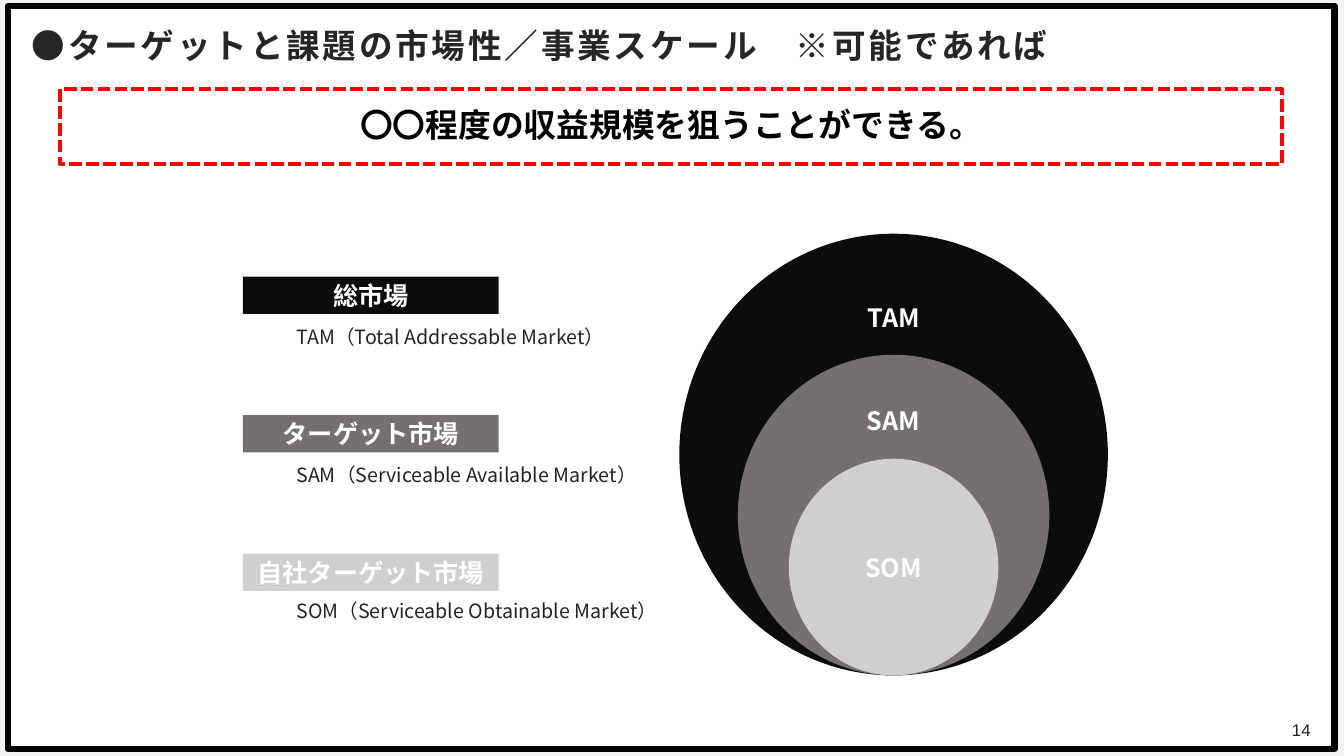
from pptx import Presentation
from pptx.dml.color import RGBColor
from pptx.enum.dml import MSO_LINE
from pptx.enum.shapes import MSO_SHAPE
from pptx.enum.text import MSO_ANCHOR, PP_ALIGN
from pptx.util import Cm, Pt
from lxml import etree

RECTANGLE, OVAL = MSO_SHAPE.RECTANGLE, MSO_SHAPE.OVAL
TOP, MIDDLE = MSO_ANCHOR.TOP, MSO_ANCHOR.MIDDLE
LEFT, CENTER, RIGHT = PP_ALIGN.LEFT, PP_ALIGN.CENTER, PP_ALIGN.RIGHT
DASH = MSO_LINE.SQUARE_DOT
DRAWING = "{http://schemas.openxmlformats.org/drawingml/2006/main}"
JAPANESE = "Noto Sans CJK JP"
COLORS = {
    "background": "F2F2F2", "white": "FFFFFF", "black": "000000", "red": "FF0000",
    "title": "262626", "caption": "232323", "number": "1F2021",
    "TAM": "0C0C0C", "SAM": "757070", "SOM": "D0CECE",
}


def color(name):
    return RGBColor.from_string(COLORS[name])


def write(text, box, kind=None, fill=None, line=None, line_width=3, dash=None,
          size=18, font=JAPANESE, ink="white", bold=False, align=CENTER,
          anchor=MIDDLE, margins=(0.18, 0.1), line_spacing=None, tracking=None):
    """Add a shape, or a text box when no kind is given, and format its text."""
    left, top, width, height = [Cm(value) for value in box]
    if kind is None:
        shape = slide.shapes.add_textbox(left, top, width, height)
    else:
        shape = slide.shapes.add_shape(kind, left, top, width, height)
        shape.shadow.inherit = False
        if fill:
            shape.fill.solid()
            shape.fill.fore_color.rgb = color(fill)
        else:
            shape.fill.background()
        if line:
            shape.line.color.rgb = color(line)
            shape.line.width = Pt(line_width)
            if dash:
                shape.line.dash_style = dash
        else:
            shape.line.fill.background()
    if not text:
        return
    frame = shape.text_frame
    frame.word_wrap = True
    frame.vertical_anchor = anchor
    frame.margin_left = frame.margin_right = Cm(margins[0])
    frame.margin_top = frame.margin_bottom = Cm(margins[1])
    paragraph = frame.paragraphs[0]
    paragraph.alignment = align
    if line_spacing:
        paragraph.line_spacing = line_spacing
    run = paragraph.add_run()
    run.text = text
    run.font.size = Pt(size)
    run.font.bold = bold
    run.font.color.rgb = color(ink)
    run.font.name = font
    # East Asian typeface and letter spacing
    properties = run.font._element
    etree.SubElement(properties, DRAWING + "ea").set("typeface", font)
    if tracking:
        properties.set("spc", str(tracking * 100))


presentation = Presentation()
presentation.slide_width = Cm(33.87)
presentation.slide_height = Cm(19.05)
slide = presentation.slides.add_slide(presentation.slide_layouts[6])
slide.background.fill.solid()
slide.background.fill.fore_color.rgb = color("background")

# Frame and title
write("", (0.2, 0.15, 33.43, 18.72), kind=RECTANGLE, fill="white",
      line="black", line_width=4.5)
write("●ターゲットと課題の市場性／事業スケール　※可能であれば", (0.3, 0.25, 28.58, 1.88),
      size=24, ink="title", bold=True, align=LEFT, margins=(0.5, 0.5),
      line_spacing=0.9, tracking=2)

# Nested market circles, sharing a centre line and a bottom edge
CIRCLE_CENTER, CIRCLE_BOTTOM = 22.52, 17.02
circles = [("TAM", 10.8, 11.13, TOP), ("SAM", 7.85, 8.08, TOP), ("SOM", 5.28, 5.46, MIDDLE)]
for market, width, height, anchor in circles:
    write(market, (CIRCLE_CENTER - width / 2, CIRCLE_BOTTOM - height, width, height),
          kind=OVAL, fill=market, bold=True, anchor=anchor)

# Market labels with their captions
LABEL_TOP, LABEL_PITCH = 6.97, 3.49
markets = [
    ("TAM", "総市場", "Total Addressable Market", 1.11),
    ("SAM", "ターゲット市場", "Serviceable Available Market", 1.11),
    ("SOM", "自社ターゲット市場", "Serviceable Obtainable Market", 1.04),
]
for row, (market, label, meaning, caption_offset) in enumerate(markets):
    top = LABEL_TOP + row * LABEL_PITCH
    write(label, (6.12, top, 6.45, 0.94), kind=RECTANGLE, fill=market, bold=True)
    write(f"{market}（{meaning}）", (7.29, top + caption_offset, 10.46, 0.94),
          size=14, ink="caption", align=LEFT, anchor=TOP)

# Page number
write("14", (31.17, 18.19, 2.11, 0.38), size=12, font="Arial", ink="number",
      align=RIGHT, margins=(0.25, 0.13))

# Key message
write("〇〇程度の収益規模を狙うことができる。", (1.52, 2.24, 30.78, 1.9), kind=RECTANGLE,
      line="red", dash=DASH, size=23.4, ink="black", bold=True,
      margins=(0.25, 0.13), line_spacing=0.9)

presentation.save("out.pptx")
